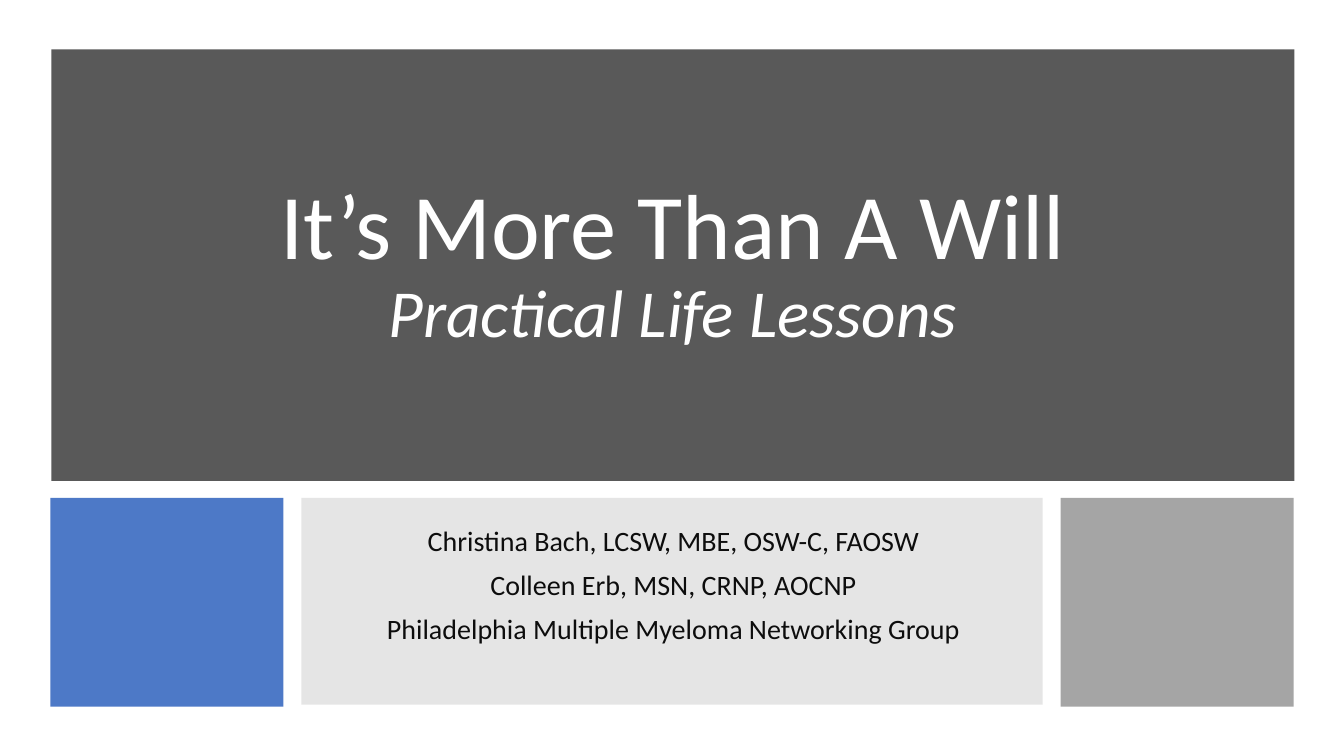
from lxml import etree
from pptx import Presentation
from pptx.dml.color import RGBColor
from pptx.enum import shapes, text
from pptx.oxml import ns
from pptx.util import Inches, Pt

deck = Presentation()
deck.slide_width, deck.slide_height = Inches(13.33), Inches(7.5)
slide = deck.slides.add_slide(deck.slide_layouts[6])


def color(hex_string):
    return RGBColor.from_string(hex_string)


def add_centered_text(box, content, size, hex_string):
    left, top, width, height = map(Inches, box)
    frame = slide.shapes.add_textbox(left, top, width, height).text_frame
    frame.word_wrap = True
    frame.vertical_anchor = text.MSO_ANCHOR.MIDDLE
    frame.text = content
    for paragraph in frame.paragraphs:
        paragraph.alignment = text.PP_ALIGN.CENTER
        paragraph.line_spacing = 0.9
        for run in paragraph.runs:
            run.font.name = "Calibri"
            run.font.size = Pt(size)
            run.font.color.rgb = color(hex_string)
    return frame


# Panels: title banner above a row of three, with opacity in percent
panels = [
    (0.51, 0.49, 12.33, 4.28, "595959", 100),
    (0.5, 4.94, 2.31, 2.07, "4472C4", 95),
    (2.99, 4.94, 7.35, 2.05, "7F7F7F", 20),
    (10.52, 4.94, 2.31, 2.07, "A5A5A5", 100),
]
for left, top, width, height, fill, opacity in panels:
    panel = slide.shapes.add_shape(
        shapes.MSO_SHAPE.RECTANGLE,
        Inches(left), Inches(top), Inches(width), Inches(height))
    panel.shadow.inherit = False
    panel.line.fill.background()
    panel.fill.solid()
    panel.fill.fore_color.rgb = color(fill)
    if opacity < 100:
        fill_color = panel.fill._xPr.find(".//" + ns.qn("a:srgbClr"))
        etree.SubElement(fill_color, ns.qn("a:alpha"), val=str(opacity * 1000))

# Title and subtitle, parted by a line break
title = add_centered_text(
    (1.2, 1.2, 10.95, 2.87),
    "It’s More Than A Will\vPractical Life Lessons", 66, "FFFFFF")
tagline = title.paragraphs[0].runs[1]
tagline.font.size = Pt(48)
tagline.font.italic = True

# Presenters, set slightly above the middle of their panel
presenters = add_centered_text(
    (3.53, 5.3, 6.3, 1.35),
    "Christina Bach, LCSW, MBE, OSW-C, FAOSW\n"
    "Colleen Erb, MSN, CRNP, AOCNP\n"
    "Philadelphia Multiple Myeloma Networking Group", 20, "0D0D0D")
presenters.margin_bottom = Inches(0.36)
for presenter in presenters.paragraphs[1:]:
    presenter.space_before = Pt(10)

deck.save("out.pptx")
